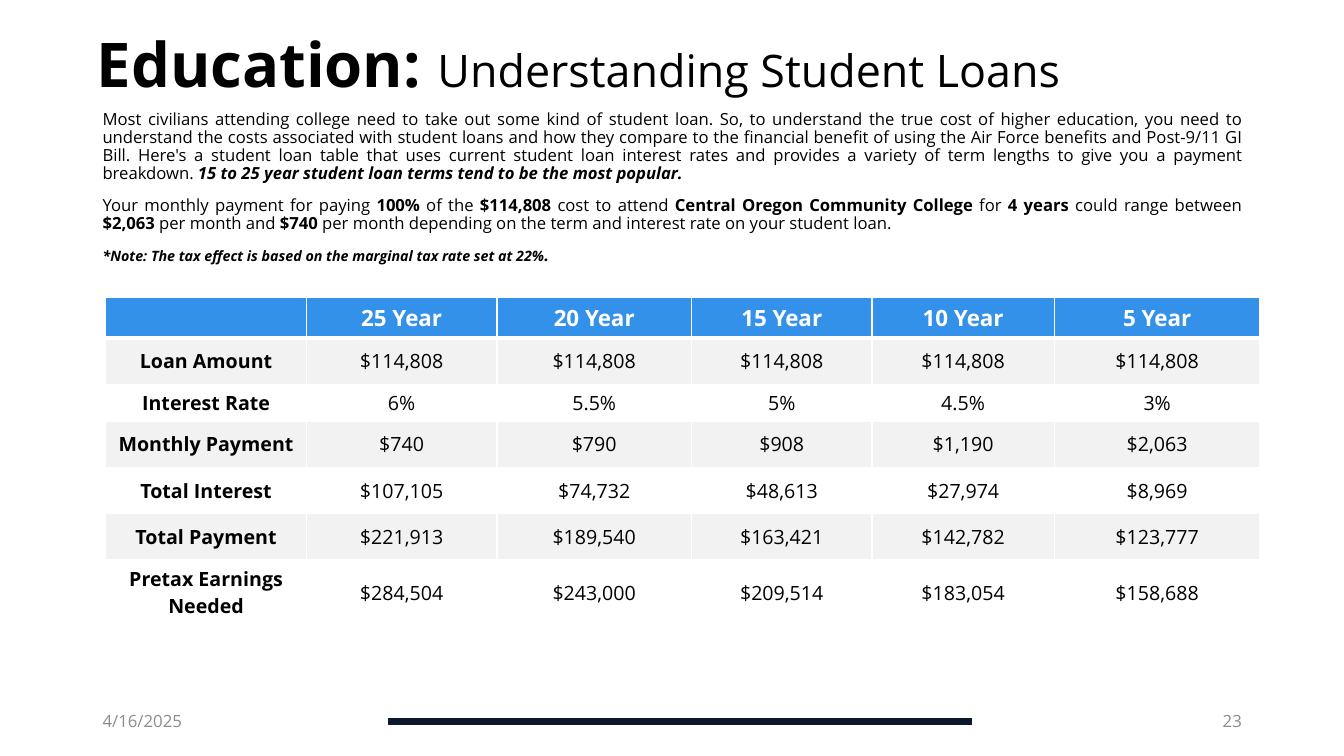
import pptx
import pptx.dml.color
import pptx.enum.shapes
import pptx.enum.text
import pptx.oxml
import pptx.oxml.ns
import pptx.util

Pt = pptx.util.Pt
ALIGN = pptx.enum.text.PP_ALIGN
ANCHOR = pptx.enum.text.MSO_ANCHOR

COLORS = {
    "black": "000000",
    "white": "FFFFFF",
    "gray": "8C8C8C",
    "navy": "0E182D",
    "blue": "3491E9",
    "band": "F2F2F2",
}
BOLD = {"bold": True}
BOLD_ITALIC = {"bold": True, "italic": True}
BODY = {"size": Pt(11.9)}
NOTE = {"size": Pt(10.2), **BOLD_ITALIC}

TITLE = [
    ("Education: ", {"size": Pt(44), **BOLD}),
    ("Understanding Student Loans", {"size": Pt(32)}),
]
EXPLANATION = [
    [
        ("Most civilians attending college need to take out some kind of student loan. "
         "So, to understand the true cost of higher education, you need to understand "
         "the costs associated with student loans and how they compare to the financial "
         "benefit of using the Air Force benefits and Post-9/11 GI Bill. Here's a student "
         "loan table that uses current student loan interest rates and provides a variety "
         "of term lengths to give you a payment breakdown. ", BODY),
        ("15 to 25 year student loan terms tend to be the most popular.",
         {**BODY, **BOLD_ITALIC}),
    ],
    [
        ("Your monthly payment for paying ", BODY),
        ("100%", {**BODY, **BOLD}),
        (" of the ", BODY),
        ("$114,808", {**BODY, **BOLD}),
        (" cost to attend ", BODY),
        ("Central Oregon Community College", {**BODY, **BOLD}),
        (" for ", BODY),
        ("4 years", {**BODY, **BOLD}),
        (" could range between ", BODY),
        ("$2,063", {**BODY, **BOLD}),
        (" per month and ", BODY),
        ("$740", {**BODY, **BOLD}),
        (" per month depending on the term and interest rate on your student loan.", BODY),
    ],
    [
        ("*Note: The tax effect is based on the marginal tax rate set at 22%", NOTE),
        (".", {**BODY, **BOLD_ITALIC}),
    ],
]
LOAN_ROWS = [
    ["", "25 Year", "20 Year", "15 Year", "10 Year", "5 Year"],
    ["Loan Amount"] + ["$114,808"] * 5,
    ["Interest Rate", "6%", "5.5%", "5%", "4.5%", "3%"],
    ["Monthly Payment", "$740", "$790", "$908", "$1,190", "$2,063"],
    ["Total Interest", "$107,105", "$74,732", "$48,613", "$27,974", "$8,969"],
    ["Total Payment", "$221,913", "$189,540", "$163,421", "$142,782", "$123,777"],
    ["Pretax Earnings Needed", "$284,504", "$243,000", "$209,514", "$183,054", "$158,688"],
]
COLUMN_WIDTHS = [143.3, 136.1, 139, 128.9, 130.3, 146.9]
ROW_HEIGHTS = [29, 33, 26.5, 33, 33, 33, 47]


def rgb(name):
    return pptx.dml.color.RGBColor.from_string(COLORS[name])


def add_runs(paragraph, runs, color="black"):
    for text, formats in runs:
        run = paragraph.add_run()
        run.text = text
        for attribute, value in {"name": "Open Sans", **formats}.items():
            setattr(run.font, attribute, value)
        run.font.color.rgb = rgb(color)


def add_text(slide, box, paragraphs, color="black", anchor=ANCHOR.MIDDLE, **formats):
    frame = slide.shapes.add_textbox(*map(Pt, box)).text_frame
    frame.word_wrap = True
    frame.vertical_anchor = anchor
    for index, runs in enumerate(paragraphs):
        paragraph = frame.add_paragraph() if index else frame.paragraphs[0]
        if index:
            paragraph.space_before = Pt(10)
        for attribute, value in formats.items():
            setattr(paragraph, attribute, value)
        add_runs(paragraph, runs, color)


def add_heading(slide, box):
    left, top, width, height = box
    add_text(slide, (left, top, width, 91.4), [TITLE], line_spacing=0.9)
    add_text(slide, (left + 4.3, top + 72.7, width - 3.6, height - 72.7), EXPLANATION,
             anchor=ANCHOR.TOP, line_spacing=0.9, alignment=ALIGN.JUSTIFY)


def set_borders(cell, top_width, bottom_width):
    widths = {"lnL": 1, "lnR": 1, "lnT": top_width, "lnB": bottom_width}
    properties = cell._tc.get_or_add_tcPr()
    for tag, width in widths.items():
        properties.append(pptx.oxml.parse_xml(
            f'<a:{tag} {pptx.oxml.ns.nsdecls("a")} w="{Pt(width)}"><a:solidFill>'
            f'<a:srgbClr val="{COLORS["white"]}"/></a:solidFill></a:{tag}>'))


def add_loan_table(slide, box):
    table = slide.shapes.add_table(
        len(LOAN_ROWS), len(COLUMN_WIDTHS), *map(Pt, box)).table
    for column, width in zip(table.columns, COLUMN_WIDTHS):
        column.width = Pt(width)
    for row, height in zip(table.rows, ROW_HEIGHTS):
        row.height = Pt(height)
    for row_index, values in enumerate(LOAN_ROWS):
        header = row_index == 0
        fill = "blue" if header else "band" if row_index % 2 else "white"
        for column_index, value in enumerate(values):
            cell = table.cell(row_index, column_index)
            set_borders(cell, 3 if row_index == 1 else 1, 3 if header else 1)
            cell.fill.solid()
            cell.fill.fore_color.rgb = rgb(fill)
            cell.vertical_anchor = ANCHOR.MIDDLE
            paragraph = cell.text_frame.paragraphs[0]
            paragraph.alignment = ALIGN.CENTER
            if value:
                formats = {"size": Pt(16 if header else 14),
                           "bold": header or column_index == 0}
                add_runs(paragraph, [(value, formats)], "white" if header else "black")


def add_footer(slide, box):
    left, top, width, height = box
    bar = slide.shapes.add_shape(
        pptx.enum.shapes.MSO_SHAPE.RECTANGLE,
        Pt(left + 211.7), Pt(top + 13), Pt(416.2), Pt(4.3))
    bar.shadow.inherit = False
    bar.fill.solid()
    bar.fill.fore_color.rgb = rgb("navy")
    bar.line.color.rgb = rgb("navy")
    bar.line.width = Pt(1)
    label_width = 216
    labels = [
        ("4/16/2025", left, ALIGN.LEFT),
        ("23", left + width - label_width, ALIGN.RIGHT),
    ]
    for text, label_left, alignment in labels:
        add_text(slide, (label_left, top, label_width, height),
                 [[(text, {"size": Pt(12)})]], "gray", alignment=alignment)


def main():
    presentation = pptx.Presentation()
    presentation.slide_width = Pt(960)
    presentation.slide_height = Pt(540)
    slide = presentation.slides.add_slide(presentation.slide_layouts[6])
    add_footer(slide, (66.2, 500.4, 828, 28.8))
    add_heading(slide, (61.9, 2.9, 831.6, 203.7))
    add_loan_table(slide, (75.6, 212.4, sum(COLUMN_WIDTHS), sum(ROW_HEIGHTS)))
    presentation.save("out.pptx")


if __name__ == "__main__":
    main()
